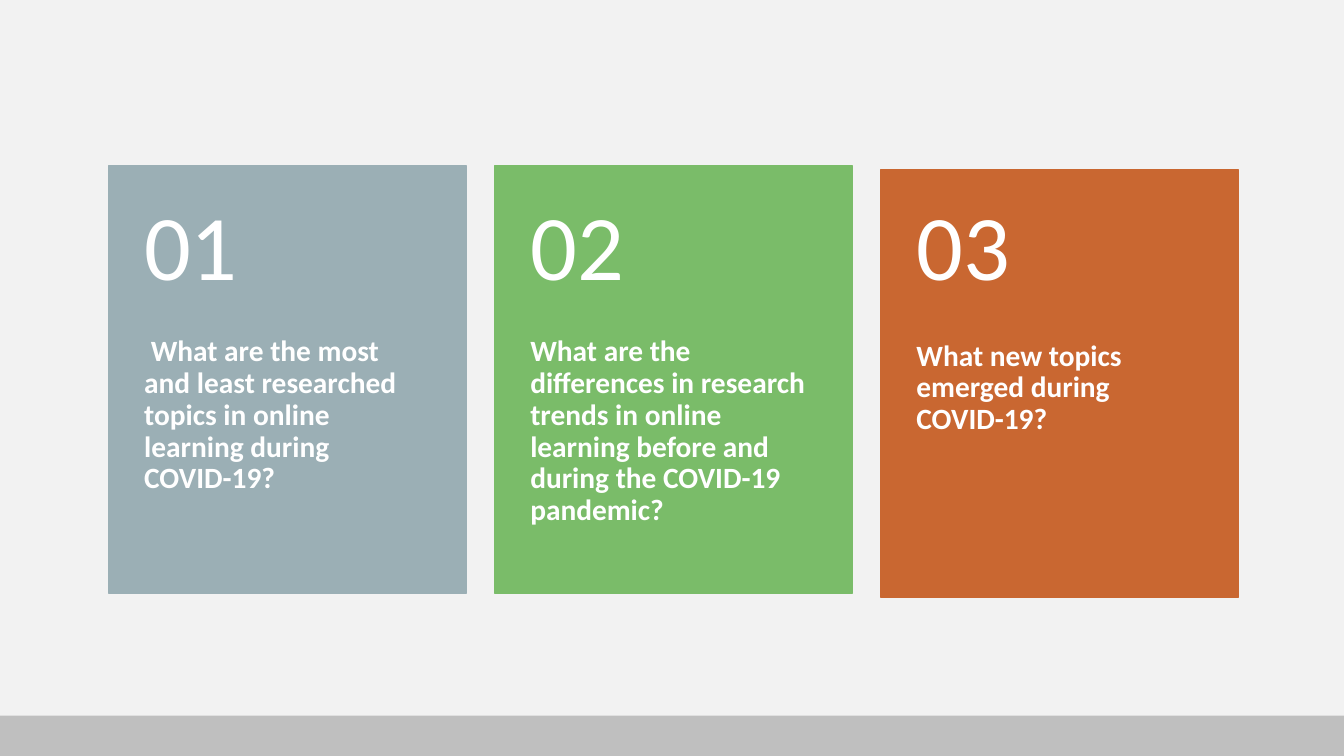
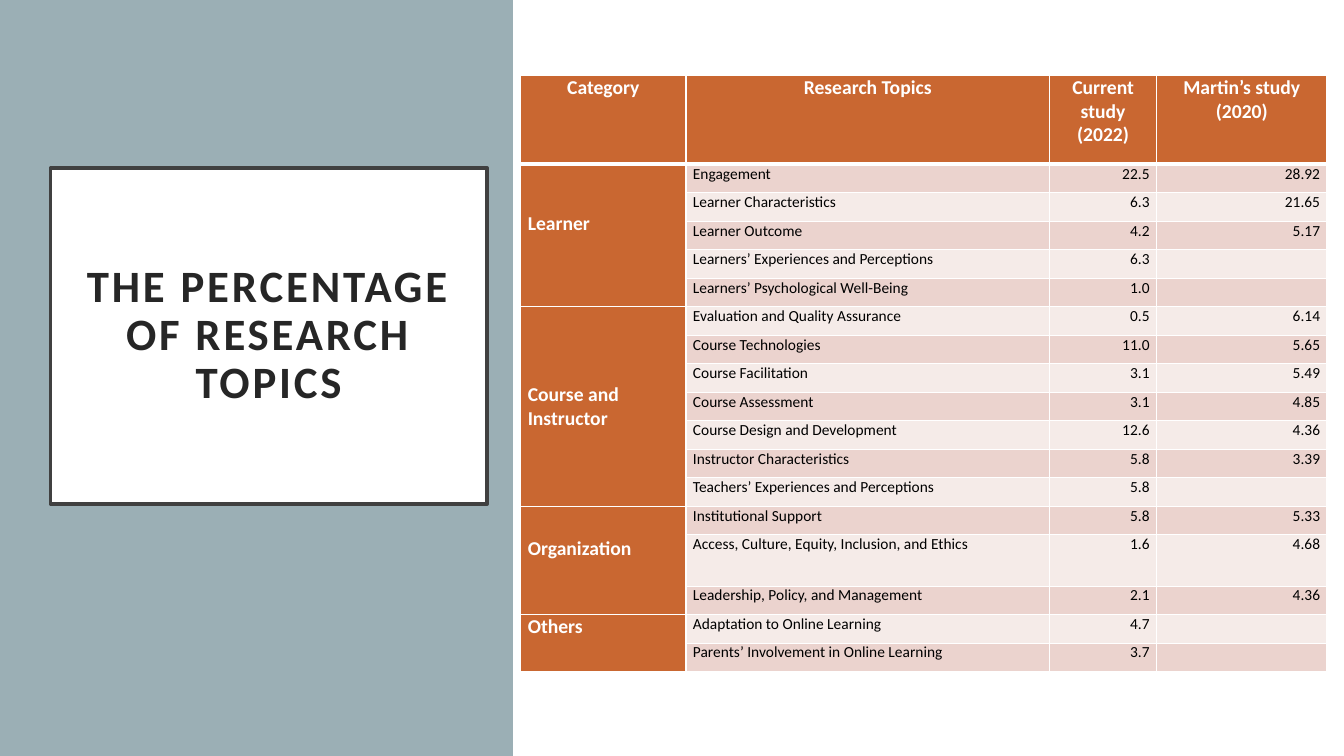
from lxml.etree import SubElement
from pptx import Presentation
from pptx.dml.color import RGBColor
from pptx.enum.shapes import MSO_SHAPE
from pptx.enum.text import MSO_ANCHOR, MSO_AUTO_SIZE, PP_ALIGN
from pptx.oxml.ns import qn
from pptx.util import Pt

FONT = "Calibri"
WHITE = RGBColor(0xFF, 0xFF, 0xFF)
BLACK = RGBColor(0, 0, 0)
INK = RGBColor(0x26, 0x26, 0x26)
FRAME = RGBColor(0x40, 0x40, 0x40)
PALE = RGBColor(0xF2, 0xF2, 0xF2)
BAND = RGBColor(0xBF, 0xBF, 0xBF)
SLATE = RGBColor(0x9B, 0xAF, 0xB5)
GREEN = RGBColor(0x7A, 0xBC, 0x69)
RUST = RGBColor(0xC9, 0x67, 0x31)
STRIPES = RGBColor(0xEB, 0xD3, 0xCE), RGBColor(0xF5, 0xEB, 0xE8)

W, H = 960, 540
BAND_H = 28.8
CARD_X, CARD_Y, CARD_W, CARD_H, CARD_STEP = 77.8, 118, 255, 306, 275.8
NUMBER_H = 122.4
PANEL_W = 366.4
COLS = 118, 259.8, 76.4, 121.8
HEAD_H, ROW_H, TALL_H = 63.4, 20.36, 36.7
TALL_TOPIC = "Access, Culture, Equity, Inclusion, and Ethics"

CARDS = [
    (SLATE, 0, "01", " What are the most and least researched topics in online "
                     "learning during COVID-19?"),
    (GREEN, 0, "02", "What are the differences in research trends in online "
                     "learning before and during the COVID-19 pandemic?"),
    (RUST, 3, "03", "What new topics emerged during COVID-19?"),
]
HEADERS = ["Category", "Research Topics", "Current study\n(2022)",
           "Martin’s study (2020)"]
MIDDLE, TOP = MSO_ANCHOR.MIDDLE, MSO_ANCHOR.TOP
GROUPS = [
    ("Learner", MIDDLE, 17, [
        ("Engagement", "22.5", "28.92"),
        ("Learner Characteristics", "6.3", "21.65"),
        ("Learner Outcome", "4.2", "5.17"),
        ("Learners’ Experiences and Perceptions", "6.3", ""),
        ("Learners’ Psychological Well-Being", "1.0", ""),
    ]),
    ("Course and Instructor", MIDDLE, 0, [
        ("Evaluation and Quality Assurance", "0.5", "6.14"),
        ("Course Technologies", "11.0", "5.65"),
        ("Course Facilitation", "3.1", "5.49"),
        ("Course Assessment", "3.1", "4.85"),
        ("Course Design and Development", "12.6", "4.36"),
        ("Instructor Characteristics", "5.8", "3.39"),
        ("Teachers’ Experiences and Perceptions", "5.8", ""),
    ]),
    ("Organization", MIDDLE, 17, [
        ("Institutional Support", "5.8", "5.33"),
        (TALL_TOPIC, "1.6", "4.68"),
        ("Leadership, Policy, and Management", "2.1", "4.36"),
    ]),
    ("Others", TOP, 0, [
        ("Adaptation to Online Learning", "4.7", ""),
        ("Parents’ Involvement in Online Learning", "3.7", ""),
    ]),
]


def write(tf, text, size=11, color=BLACK, bold=False, align=PP_ALIGN.LEFT,
          leading=None, tracking=0):
    """Fill a text frame, one paragraph for each line of text."""
    for i, line in enumerate(text.split("\n")):
        p = tf.add_paragraph() if i else tf.paragraphs[0]
        p.alignment, p.line_spacing = align, leading
        if not line:
            SubElement(p._p, qn("a:endParaRPr")).set("sz", str(size * 100))
            continue
        r = p.add_run()
        r.text = line
        f = r.font
        f.name, f.size, f.bold, f.color.rgb = FONT, Pt(size), bold, color
        if tracking:
            r._r.get_or_add_rPr().set("spc", str(tracking * 100))


def inset(box, left, top, right, bottom):
    """Set the margins of a text frame or a cell."""
    box.margin_left, box.margin_top = Pt(left), Pt(top)
    box.margin_right, box.margin_bottom = Pt(right), Pt(bottom)


class Deck:
    """Holds the presentation, its style and the current slide."""

    def __init__(self):
        """Start an empty wide presentation."""
        self.prs = Presentation()
        self.prs.slide_width, self.prs.slide_height = Pt(W), Pt(H)

    def slide(self, layout, back):
        """Add a slide with a plain background."""
        self.s = self.prs.slides.add_slide(self.prs.slide_layouts[layout])
        fill = self.s.background.fill
        fill.solid()
        fill.fore_color.rgb = back

    def rect(self, x, y, w, h, color, line=False):
        """Draw a flat rectangle, outlined in its own colour if asked."""
        sp = self.s.shapes.add_shape(MSO_SHAPE.RECTANGLE, Pt(x), Pt(y), Pt(w), Pt(h))
        sp.shadow.inherit = False
        sp.fill.solid()
        sp.fill.fore_color.rgb = color
        if line:
            sp.line.color.rgb, sp.line.width = color, Pt(1)
        else:
            sp.line.fill.background()

    def text(self, x, y, w, h, text, margins, anchor=TOP, **fmt):
        """Add a wrapped text box."""
        tf = self.s.shapes.add_textbox(Pt(x), Pt(y), Pt(w), Pt(h)).text_frame
        tf.word_wrap, tf.vertical_anchor = True, anchor
        inset(tf, *margins)
        write(tf, text, **fmt)

    def band(self):
        """Draw the footer band."""
        self.rect(0, H - BAND_H, W, BAND_H, BAND)

    def card(self, x, drop, color, number, question):
        """Draw a numbered question card."""
        y = CARD_Y + drop
        self.rect(x, y, CARD_W, CARD_H, color, line=True)
        self.text(x, y + NUMBER_H, CARD_W, CARD_H - NUMBER_H, question,
                  (25.2, 0, 25.2, 26), size=21, color=WHITE, bold=True, leading=0.9)
        self.text(x, CARD_Y, CARD_W, NUMBER_H, number, (25.2, 13, 25.2, 13),
                  MIDDLE, size=66, color=WHITE, leading=0.9)

    def title(self, x, y, w, h, text):
        """Place the framed title above the shapes drawn so far."""
        sp = self.s.shapes.title
        self.s.shapes.element.append(sp.element)
        sp.left, sp.top, sp.width, sp.height = Pt(x), Pt(y), Pt(w), Pt(h)
        sp.fill.solid()
        sp.fill.fore_color.rgb = WHITE
        sp.line.color.rgb, sp.line.width = FRAME, Pt(2.5)
        tf = sp.text_frame
        tf.word_wrap, tf.vertical_anchor = True, MIDDLE
        tf.auto_size = MSO_AUTO_SIZE.NONE
        inset(tf, 21.6, 14.4, 21.6, 14.4)
        write(tf, text, size=32, color=INK, bold=True, align=PP_ALIGN.CENTER,
              leading=0.9, tracking=2)

    def cell(self, cell, text, fill, top=1, bottom=1, anchor=TOP, lift=0, **fmt):
        """Fill, border and write one table cell."""
        tc_pr = cell._tc.get_or_add_tcPr()
        for side, width in (("L", 1), ("R", 1), ("T", top), ("B", bottom)):
            ln = SubElement(tc_pr, qn(f"a:ln{side}"), w=str(Pt(width)))
            solid = SubElement(ln, qn("a:solidFill"))
            SubElement(solid, qn("a:srgbClr"), val=str(WHITE))
        cell.fill.solid()
        cell.fill.fore_color.rgb = fill
        cell.vertical_anchor = anchor
        inset(cell, 5, 0, 5, lift)
        write(cell.text_frame, text, **fmt)

    def table(self, x, y, headers, groups):
        """Draw a striped table whose first column spans each group."""
        topics = [row for *_, rows in groups for row in rows]
        heights = [HEAD_H] + [TALL_H if t[0] == TALL_TOPIC else ROW_H for t in topics]
        tbl = self.s.shapes.add_table(len(heights), len(COLS), Pt(x), Pt(y),
                                      Pt(sum(COLS)), Pt(sum(heights))).table
        for col, width in zip(tbl.columns, COLS):
            col.width = Pt(width)
        for row, height in zip(tbl.rows, heights):
            row.height = Pt(height)
        strong = dict(size=14, color=WHITE, bold=True)
        for c, text in enumerate(headers):
            self.cell(tbl.cell(0, c), text, RUST, bottom=3,
                      align=PP_ALIGN.CENTER, **strong)
        n = 1
        for name, anchor, lift, rows in groups:
            first = n
            for row in rows:
                top = 3 if n == 1 else 1
                self.cell(tbl.cell(n, 0), name if n == first else "", RUST, top,
                          anchor=anchor, lift=lift if n == first else 0, **strong)
                for c, text in enumerate(row, 1):
                    self.cell(tbl.cell(n, c), text, STRIPES[(n - 1) % 2], top,
                              align=PP_ALIGN.LEFT if c == 1 else PP_ALIGN.RIGHT)
                n += 1
            tbl.cell(first, 0).merge(tbl.cell(n - 1, 0))


def main():
    """Build and save both slides."""
    deck = Deck()
    deck.slide(6, PALE)
    deck.band()
    for i, (color, drop, number, question) in enumerate(CARDS):
        deck.card(CARD_X + i * CARD_STEP, drop, color, number, question)

    deck.slide(5, WHITE)
    deck.rect(0, 0, PANEL_W, H, SLATE)
    deck.title(36, 120, 312, 240, "THE PERCENTAGE OF RESEARCH TOPICS")
    deck.table(372, 54, HEADERS, GROUPS)
    deck.prs.save("out.pptx")


if __name__ == "__main__":
    main()
